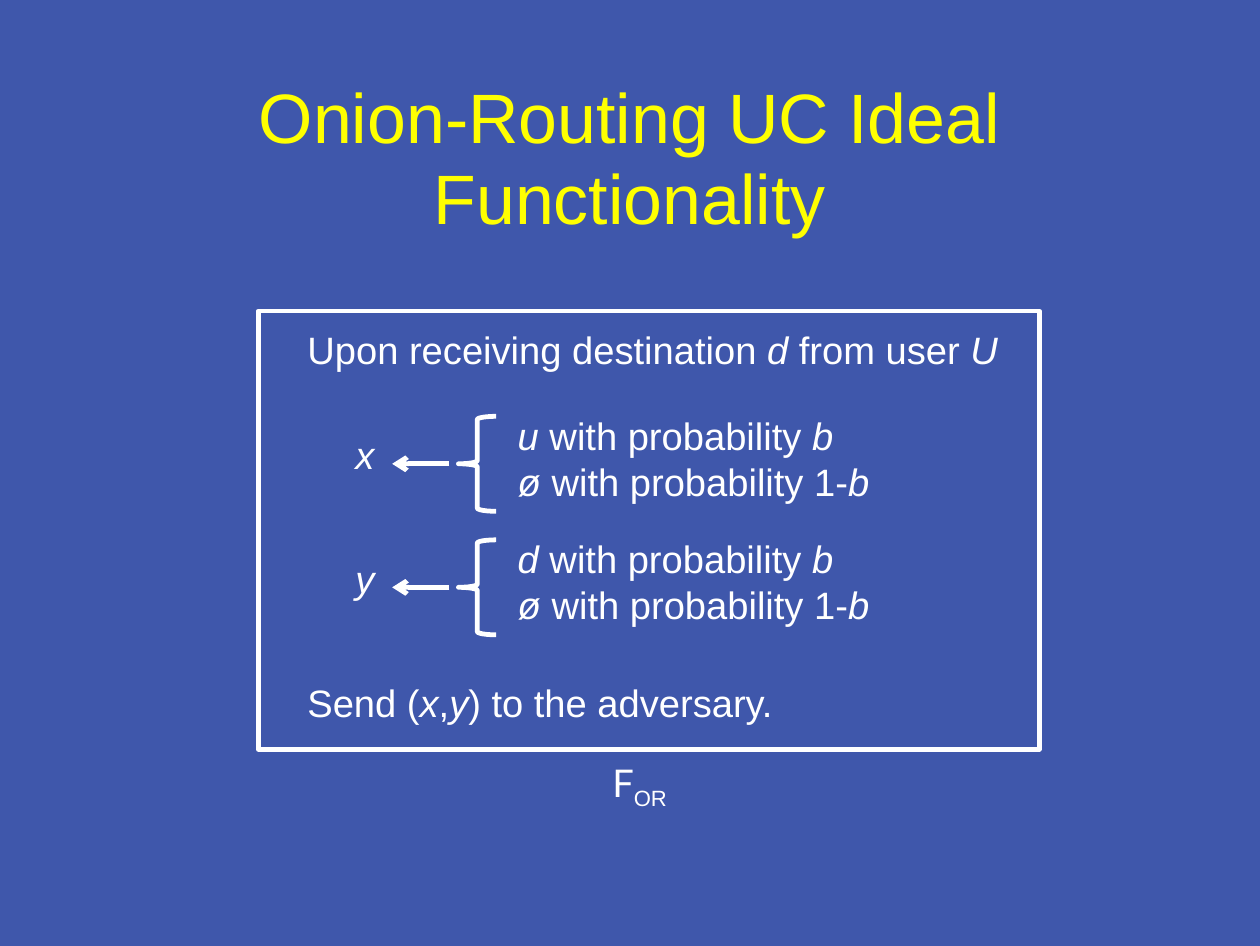
from lxml.etree import SubElement
from pptx import Presentation
from pptx.dml.color import RGBColor
from pptx.enum.shapes import MSO_CONNECTOR, MSO_SHAPE
from pptx.enum.text import MSO_ANCHOR, PP_ALIGN
from pptx.oxml.ns import qn
from pptx.util import Inches, Pt

COLORS = {"background": "3F57AB", "title": "FFFF00", "ink": "FFFFFF"}
BODY_FONT = {"name": "Arial", "size": Pt(24)}
TITLE_FONT = {"name": "Arial", "size": Pt(44)}
NO_MARGINS = {f"margin_{side}": 0 for side in ("left", "top", "right", "bottom")}


def rgb(name):
    return RGBColor.from_string(COLORS[name])


def apply(target, formats):
    for key, value in formats.items():
        setattr(target, key, value)


def add_run(paragraph, text, color="ink", **formats):
    run = paragraph.add_run()
    run.text = text
    apply(run.font, {**BODY_FONT, **formats})
    run.font.color.rgb = rgb(color)
    return run


def add_title(slide, text):
    title = slide.shapes.title
    apply(title, {"left": Inches(0.81), "top": Inches(0.69),
                  "width": Inches(9.4), "height": Inches(1.37)})
    frame = title.text_frame
    apply(frame, {**NO_MARGINS, "word_wrap": True,
                  "vertical_anchor": MSO_ANCHOR.MIDDLE})
    heading = frame.paragraphs[0]
    apply(heading, {"alignment": PP_ALIGN.CENTER, "line_spacing": Pt(51)})
    add_run(heading, text, "title", **TITLE_FONT)


def add_text(slide, lines, left, top, width, height=0.5):
    """Add lines of text; parts between asterisks are italic."""
    box = slide.shapes.add_textbox(*map(Inches, (left, top, width, height)))
    frame = box.text_frame
    frame.word_wrap = True
    for index, line in enumerate(lines):
        paragraph = frame.add_paragraph() if index else frame.paragraphs[0]
        paragraph.line_spacing = Pt(29)
        for part, text in enumerate(line.split("*")):
            if text:
                add_run(paragraph, text, italic=part % 2 == 1)
    return frame


def add_outline(slide, kind, left, top, width, height):
    outline = slide.shapes.add_shape(
        kind, *map(Inches, (left, top, width, height)))
    outline.shadow.inherit = False
    outline.fill.background()
    outline.line.color.rgb = rgb("ink")
    outline.line.width = Pt(3)


def add_arrow(slide, start_x, end_x, y):
    arrow = slide.shapes.add_connector(
        MSO_CONNECTOR.STRAIGHT, *map(Inches, (start_x, y, end_x, y)))
    arrow.line.color.rgb = rgb("ink")
    arrow.line.width = Pt(3)
    SubElement(arrow.line._get_or_add_ln(), qn("a:tailEnd"), type="arrow")
    SubElement(arrow._element.spPr, qn("a:effectLst"))


def add_assignment(slide, variable, value, top):
    """Draw variable <- { value or ø, with the brace starting at top."""
    add_text(slide, [f"*{variable}*"], 3.01, top + 0.08, 0.42)
    add_arrow(slide, 3.93, 3.43, top + 0.415)
    add_outline(slide, MSO_SHAPE.LEFT_BRACE, 4.01, top, 0.33, 0.83)
    choices = [f"*{value}* with probability *b*",
               "*ø* with probability 1-*b*"]
    add_text(slide, choices, 4.43, top - 0.09, 4.5, 0.91)


def add_functionality_label(slide):
    frame = add_text(slide, [""], 4.76, 6.64, 1.67)
    label = frame.paragraphs[0]
    label.alignment = PP_ALIGN.CENTER
    add_run(label, "F", name="Lato")
    subscript = add_run(label, "OR")
    subscript.font._element.set("baseline", "-25000")


def main():
    prs = Presentation()
    prs.slide_width, prs.slide_height = Inches(11.02), Inches(8.27)
    slide = prs.slides.add_slide(prs.slide_layouts[5])
    background = slide.background.fill
    background.solid()
    background.fore_color.rgb = rgb("background")

    add_title(slide, "Onion-Routing UC Ideal Functionality")

    # Functionality box and its steps
    add_outline(slide, MSO_SHAPE.RECTANGLE, 2.26, 2.72, 6.83, 3.83)
    add_text(slide, ["Upon receiving destination *d* from user *U*"],
             2.59, 2.8, 6.5)
    for row, (variable, value) in enumerate([("x", "u"), ("y", "d")]):
        add_assignment(slide, variable, value, 3.64 + 1.08 * row)
    add_text(slide, ["Send (*x*,*y*) to the adversary."], 2.59, 5.89, 6.5)

    # Name below the box
    add_functionality_label(slide)

    prs.save("out.pptx")


if __name__ == "__main__":
    main()
